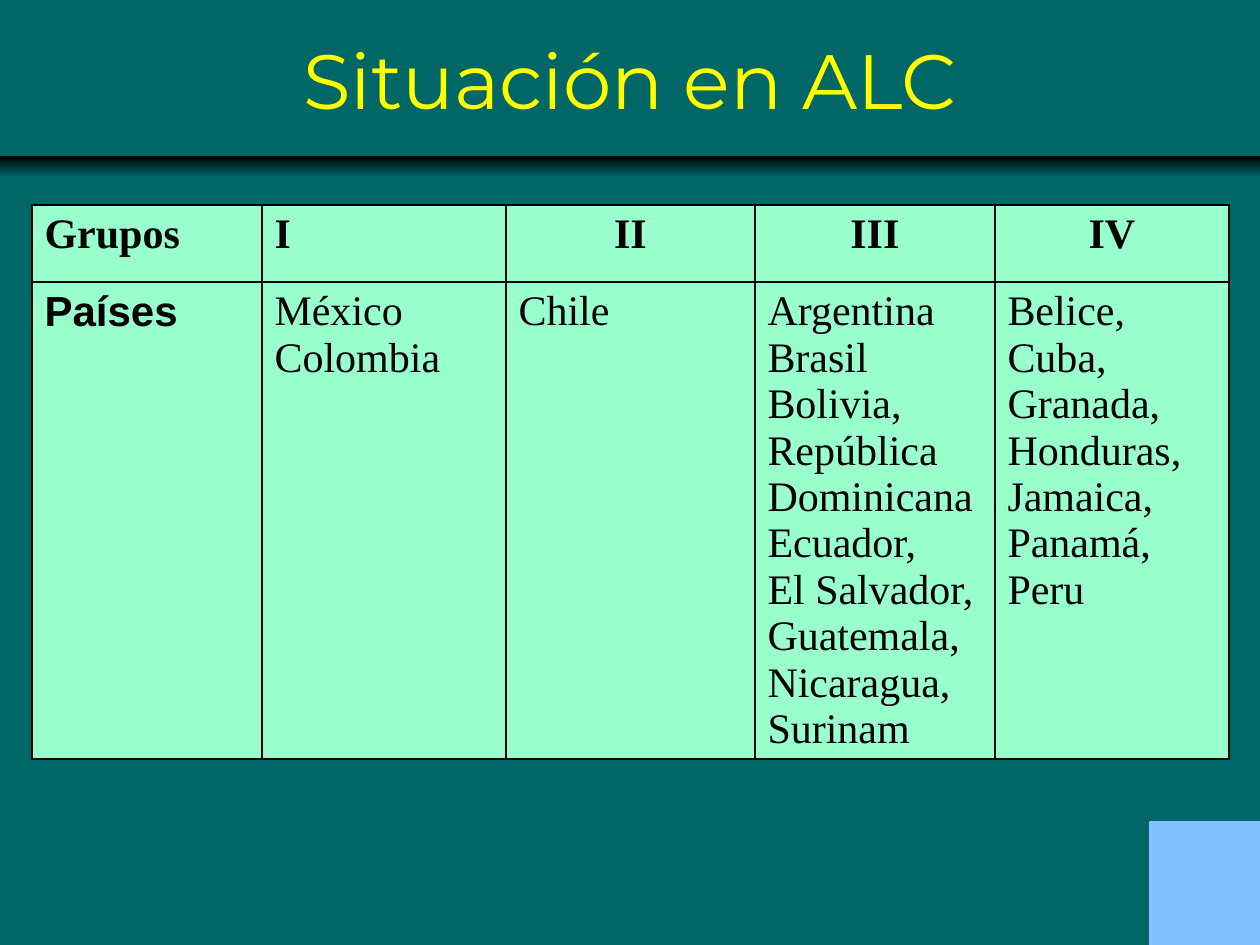
"""Build the slide that groups Latin American and Caribbean countries."""
from dataclasses import dataclass

from lxml.etree import SubElement
from pptx import Presentation
from pptx.dml.color import RGBColor
from pptx.enum.shapes import MSO_SHAPE
from pptx.enum.text import MSO_ANCHOR, PP_ALIGN
from pptx.oxml.ns import qn
from pptx.util import Emu, Pt

PX = 914400 / 126
COLORS = {
    "background": "006666",
    "title": "FFFF00",
    "band": "000000",
    "text": "000000",
    "border": "000000",
    "cell": "99FFCC",
    "corner": "82C0FF",
}
TITLE_FORMAT = {"name": "Montserrat", "size": Pt(44), "bold": False}
HEADER_FORMAT = {"name": "Times New Roman", "size": Pt(24), "bold": True}
LABEL_FORMAT = {**HEADER_FORMAT, "name": "Arial"}
BODY_FORMAT = {**HEADER_FORMAT, "bold": False}
COLUMN_WIDTHS = [230, 244, 249, 240, 234]
ROW_HEIGHTS = [77, 477]


@dataclass
class Box:
    left: int
    top: int
    width: int
    height: int

    def emu(self) -> list[Emu]:
        return [px(value) for value in (self.left, self.top, self.width, self.height)]


@dataclass
class CellText:
    lines: list[str]
    format: dict
    alignment: PP_ALIGN = PP_ALIGN.LEFT


ROWS = [
    [
        CellText(["Grupos"], HEADER_FORMAT),
        CellText(["I"], HEADER_FORMAT),
        *[CellText([name], HEADER_FORMAT, PP_ALIGN.CENTER) for name in ("II", "III", "IV")],
    ],
    [
        CellText(["Países"], LABEL_FORMAT),
        CellText(["México", "Colombia"], BODY_FORMAT),
        CellText(["Chile"], BODY_FORMAT),
        CellText(
            [
                "Argentina",
                "Brasil",
                "Bolivia, República Dominicana\vEcuador,",
                "El Salvador, Guatemala, Nicaragua, Surinam",
            ],
            BODY_FORMAT,
        ),
        CellText(
            ["Belice,", "Cuba, Granada, Honduras, Jamaica, Panamá,", "Peru"],
            BODY_FORMAT,
        ),
    ],
]


def px(value: int) -> Emu:
    return Emu(round(value * PX))


def color(name: str) -> RGBColor:
    return RGBColor.from_string(COLORS[name])


def format_paragraph(paragraph, values: dict, color_name: str, alignment: PP_ALIGN) -> None:
    paragraph.alignment = alignment
    for run in paragraph.runs:
        for attribute, value in values.items():
            setattr(run.font, attribute, value)
        run.font.color.rgb = color(color_name)


def draw_band(slide) -> None:
    band = slide.shapes.add_shape(MSO_SHAPE.RECTANGLE, *Box(0, 156, 1260, 21).emu())
    band.shadow.inherit = False
    band.line.fill.background()
    band.fill.gradient()
    band.fill.gradient_angle = 270
    for stop, position, name in zip(band.fill.gradient_stops, (0, 1), ("band", "background")):
        stop.position = position
        stop.color.rgb = color(name)


def draw_title(slide, text: str) -> None:
    title = slide.shapes.title
    title.left, title.top, title.width, title.height = Box(95, 0, 1071, 157).emu()
    title.text_frame.text = text
    title.text_frame.vertical_anchor = MSO_ANCHOR.MIDDLE
    format_paragraph(title.text_frame.paragraphs[0], TITLE_FORMAT, "title", PP_ALIGN.CENTER)


def add_borders(cell) -> None:
    properties = cell._tc.get_or_add_tcPr()
    for position, side in enumerate(("a:lnL", "a:lnR", "a:lnT", "a:lnB")):
        line = properties.makeelement(qn(side), {"w": str(Pt(1))})
        fill = SubElement(line, qn("a:solidFill"))
        SubElement(fill, qn("a:srgbClr"), {"val": COLORS["border"]})
        properties.insert(position, line)


def fill_cell(cell, content: CellText) -> None:
    cell.fill.solid()
    cell.fill.fore_color.rgb = color("cell")
    add_borders(cell)
    cell.text_frame.text = "\n".join(content.lines)
    for paragraph in cell.text_frame.paragraphs:
        format_paragraph(paragraph, content.format, "text", content.alignment)


def draw_table(slide) -> None:
    box = Box(32, 205, sum(COLUMN_WIDTHS), sum(ROW_HEIGHTS))
    table = slide.shapes.add_table(len(ROWS), len(COLUMN_WIDTHS), *box.emu()).table
    table.first_row = table.horz_banding = False
    for column, width in zip(table.columns, COLUMN_WIDTHS):
        column.width = px(width)
    for row, height, contents in zip(table.rows, ROW_HEIGHTS, ROWS):
        row.height = px(height)
        for cell, content in zip(row.cells, contents):
            fill_cell(cell, content)


def draw_corner(slide) -> None:
    corner = slide.shapes.add_shape(
        MSO_SHAPE.ROUNDED_RECTANGLE, *Box(1150, 822, 110, 123).emu()
    )
    corner.adjustments[0] = 0
    corner.shadow.inherit = False
    corner.fill.solid()
    corner.fill.fore_color.rgb = color("corner")
    corner.line.color.rgb = color("corner")
    corner.line.width = Pt(1.45)


def main() -> None:
    presentation = Presentation()
    presentation.slide_width, presentation.slide_height = px(1260), px(945)
    slide = presentation.slides.add_slide(presentation.slide_layouts[5])
    slide.background.fill.solid()
    slide.background.fill.fore_color.rgb = color("background")
    draw_band(slide)
    draw_title(slide, "Situación en ALC")
    draw_table(slide)
    draw_corner(slide)
    presentation.save("out.pptx")


if __name__ == "__main__":
    main()
